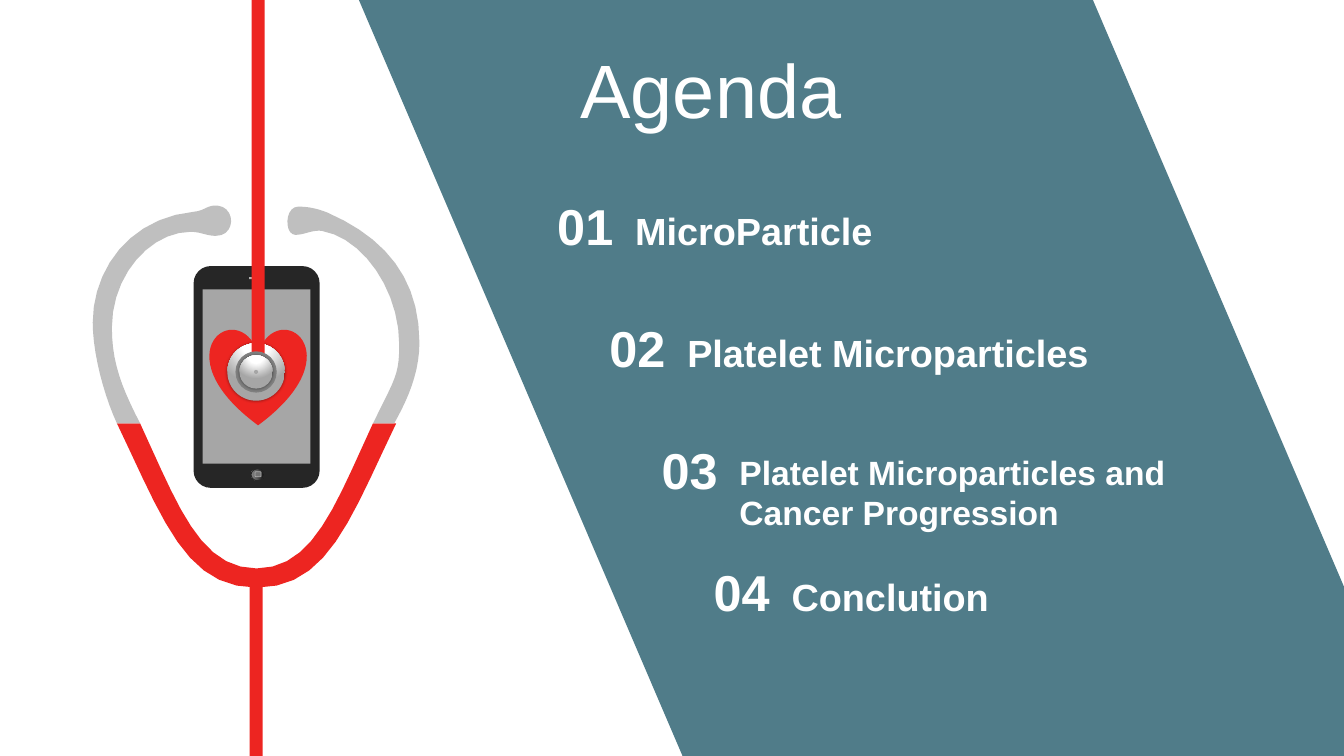
from lxml import etree
from pptx import Presentation
from pptx.dml.color import RGBColor
from pptx.enum.shapes import MSO_SHAPE as SHAPE
from pptx.enum.text import MSO_ANCHOR, MSO_AUTO_SIZE, PP_ALIGN
from pptx.oxml.ns import qn
from pptx.util import Cm, Pt

INCH = 2.54
WIDTH, HEIGHT = 13.33, 7.5
WHITE = RGBColor(0xFF, 0xFF, 0xFF)
TEAL = RGBColor(0x50, 0x7C, 0x89)
RED = RGBColor(0xED, 0x25, 0x21)
BLACK = RGBColor(0x26, 0x26, 0x26)
INK = RGBColor(0x0F, 0x0F, 0x0F)
SLATE = RGBColor(0x59, 0x59, 0x59)
DARK = RGBColor(0x73, 0x73, 0x73)
GREY = RGBColor(0x80, 0x80, 0x80)
SCREEN = RGBColor(0xA6, 0xA6, 0xA6)
PALE = RGBColor(0xB0, 0xB0, 0xB0)
SILVER = RGBColor(0xBF, 0xBF, 0xBF)
SHADOW = RGBColor(0, 0, 0)

METAL = [(0, WHITE), (35, WHITE), (100, SCREEN)]
BUTTON = [(0, INK), (56, SLATE), (91, GREY), (100, SILVER)]

TUBE_WIDTH = 0.13
TUBE_AXIS = 2.545
CHEST_PIECE = (2.54, 3.69)
ITEM_START, ITEM_STEP = (5.28, 1.89), (0.517, 1.21)
ITEMS = [
    (["MicroParticle"], 27),
    (["Platelet Microparticles"], 27),
    (["Platelet Microparticles and", "Cancer Progression"], 24),
    (["Conclution"], 27)]


def bezier(ends, t):
    weights = ((1 - t) ** 3, 3 * t * (1 - t) ** 2, 3 * t * t * (1 - t), t ** 3)
    return tuple(sum(w * p[axis] for w, p in zip(weights, ends)) for axis in (0, 1))


def curve(start, *bends, steps=10):
    points = [start]
    for bend in bends:
        ends = (points[-1], *bend)
        points += [bezier(ends, i / steps) for i in range(1, steps + 1)]
    return points


def mirror(points):
    return [(2 * TUBE_AXIS - x, y) for x, y in reversed(points)]


def yoke():
    outer = curve((1.16, 4.2), ((1.62, 5.16), (1.84, 5.83), (TUBE_AXIS, 5.83)))
    inner = curve((1.39, 4.2), ((1.76, 5), (1.98, 5.64), (TUBE_AXIS, 5.64)))
    return outer + mirror(outer) + mirror(inner)[::-1] + inner[::-1]


def left_ear():
    outer = curve((1.16, 4.2), ((1.03, 3.92), (0.92, 3.5), (0.92, 3.2)),
                  ((0.92, 2.68), (1.28, 2.16), (1.93, 2.1)))
    tip = curve(outer[-1], ((2.03, 2.09), (2.06, 2.03), (2.16, 2.04)),
                ((2.34, 2.06), (2.34, 2.34), (2.14, 2.34)),
                ((2.05, 2.34), (1.99, 2.3), (1.89, 2.3)))
    inner = curve(tip[-1], ((1.5, 2.3), (1.11, 2.72), (1.11, 3.25)),
                  ((1.11, 3.6), (1.21, 3.85), (1.39, 4.2)))
    return outer + tip + inner


def right_ear():
    outer = curve((3.91, 4.2), ((4.04, 3.97), (4.16, 3.7), (4.16, 3.4)),
                  ((4.16, 2.76), (3.82, 2.36), (3.25, 2.11)))
    tip = curve(outer[-1], ((3.15, 2.07), (3.06, 2.05), (2.96, 2.05)),
                ((2.82, 2.05), (2.82, 2.33), (2.93, 2.33)),
                ((3.02, 2.33), (3.09, 2.28), (3.19, 2.29)))
    inner = curve(tip[-1], ((3.6, 2.36), (3.96, 2.88), (3.96, 3.42)),
                  ((3.96, 3.72), (3.92, 3.75), (3.7, 4.2)))
    return outer + tip + inner


def write(tf, lines, size, bold=False, color=WHITE, font="Arial", align=PP_ALIGN.LEFT):
    for i, line in enumerate(lines):
        p = tf.add_paragraph() if i else tf.paragraphs[0]
        p.alignment = align
        r = p.add_run()
        r.text = line
        r.font.size, r.font.bold, r.font.name = Pt(size), bold, font
        r.font.color.rgb = color


class Deck:
    def __init__(self, prs):
        self.shapes = prs.slides.add_slide(prs.slide_layouts[6]).shapes

    def box(self, at):
        return [Cm(v * INCH) for v in at]

    def paint(self, s, fill, line=None, width=0):
        s.shadow.inherit = False
        s.fill.solid()
        s.fill.fore_color.rgb = fill
        if line is None:
            s.line.fill.background()
        else:
            s.line.color.rgb = line
            s.line.width = Pt(width)

    def shape(self, kind, at, fill, line=None, width=0, turn=0, adj=None):
        s = self.shapes.add_shape(kind, *self.box(at))
        self.paint(s, fill, line, width)
        s.rotation = turn
        if adj is not None:
            s.adjustments[0] = adj
        return s

    def outline(self, fill, *contours):
        first, *others = [[tuple(self.box(point)) for point in c] for c in contours]
        fb = self.shapes.build_freeform(*first[0])
        fb.add_line_segments(first[1:])
        for points in others:
            fb.move_to(*points[0])
            fb.add_line_segments(points[1:])
        self.paint(fb.convert_to_shape(), fill)

    def gradient(self, s, stops, radial=False):
        solid = s.element.spPr.find(qn("a:solidFill"))
        grad = etree.Element(qn("a:gradFill"), rotWithShape="0" if radial else "1")
        gs_list = etree.SubElement(grad, qn("a:gsLst"))
        for pos, color in stops:
            gs = etree.SubElement(gs_list, qn("a:gs"), pos=str(pos * 1000))
            etree.SubElement(gs, qn("a:srgbClr"), val=str(color))
        if radial:
            circle = etree.SubElement(grad, qn("a:path"))
            circle.set("path", "circle")
            etree.SubElement(circle, qn("a:fillToRect"), l="50000", t="-80000", r="50000", b="180000")
        else:
            etree.SubElement(grad, qn("a:lin"), ang="10800000", scaled="0")
        solid.getparent().replace(solid, grad)

    def tube(self, center_x, top, length):
        at = (center_x - length / 2, top + (length - TUBE_WIDTH) / 2, length, TUBE_WIDTH)
        self.shape(SHAPE.RECTANGLE, at, RED, turn=270)

    def disc(self, size, fill):
        x, y = CHEST_PIECE
        return self.shape(SHAPE.OVAL, (x - size / 2, y - size / 2, size, size), fill, turn=270)

    def metal_disc(self, size):
        s = self.disc(size, SCREEN)
        self.gradient(s, METAL, radial=True)
        effects = s.element.spPr.find(qn("a:effectLst"))
        shadow = etree.SubElement(effects, qn("a:outerShdw"), blurRad=str(Pt(2)), dist="0", dir="0")
        color = etree.SubElement(shadow, qn("a:srgbClr"), val=str(SHADOW))
        etree.SubElement(color, qn("a:alpha"), val="40000")

    def text(self, at, lines, size, side=0.12, anchor=MSO_ANCHOR.TOP, **style):
        tf = self.shapes.add_textbox(*self.box(at)).text_frame
        tf.word_wrap = True
        tf.auto_size = MSO_AUTO_SIZE.SHAPE_TO_FIT_TEXT
        tf.vertical_anchor = anchor
        tf.margin_left = tf.margin_right = Cm(side * INCH)
        write(tf, lines, size, **style)

    def phone(self):
        self.shape(SHAPE.ROUNDED_RECTANGLE, (1.92, 2.64, 1.25, 2.2), BLACK, adj=0.136)
        self.shape(SHAPE.RECTANGLE, (2.47, 2.75, 0.13, 0.02), PALE)
        home = self.shape(SHAPE.OVAL, (2.49, 4.65, 0.13, 0.12), GREY, line=BLACK)
        self.gradient(home, BUTTON)
        self.shape(SHAPE.ROUNDED_RECTANGLE, (2.53, 4.68, 0.06, 0.05), DARK, line=PALE, width=0.5)
        self.shape(SHAPE.RECTANGLE, (2.01, 2.87, 1.07, 1.73), SCREEN)
        self.shape(SHAPE.HEART, (2.08, 3.26, 0.96, 0.96), RED)

    def agenda_item(self, index, lines, size):
        x, y = (start + index * step for start, step in zip(ITEM_START, ITEM_STEP))
        height = 0.56 if len(lines) == 1 else 0.91
        self.text((x + 0.9, y + 0.12, 4.93, height), lines, size, bold=True)
        self.text((x, y, 1.05, 0.71), [f"{index + 1:02d}"], 36, bold=True, align=PP_ALIGN.CENTER)


def main():
    prs = Presentation()
    prs.slide_width, prs.slide_height = Cm(WIDTH * INCH), Cm(HEIGHT * INCH)
    deck = Deck(prs)
    deck.outline(TEAL, [(3.56, 0), (10.84, 0), (WIDTH, 5.82), (WIDTH, HEIGHT), (6.77, HEIGHT)])
    deck.phone()

    deck.tube(2.54, 5.7, 1.8)
    deck.metal_disc(0.57)
    deck.outline(RED, yoke())
    deck.outline(SILVER, right_ear(), left_ear())

    deck.text((5.66, 0.37, 6.59, 1.01), ["Agenda"], 54, side=0.1, anchor=MSO_ANCHOR.MIDDLE)
    for index, (lines, size) in enumerate(ITEMS):
        deck.agenda_item(index, lines, size)

    deck.tube(2.56, -0.01, 3.6)
    deck.disc(0.41, GREY)
    deck.metal_disc(0.33)
    deck.disc(0.04, SCREEN)
    prs.save("out.pptx")


if __name__ == "__main__":
    main()
